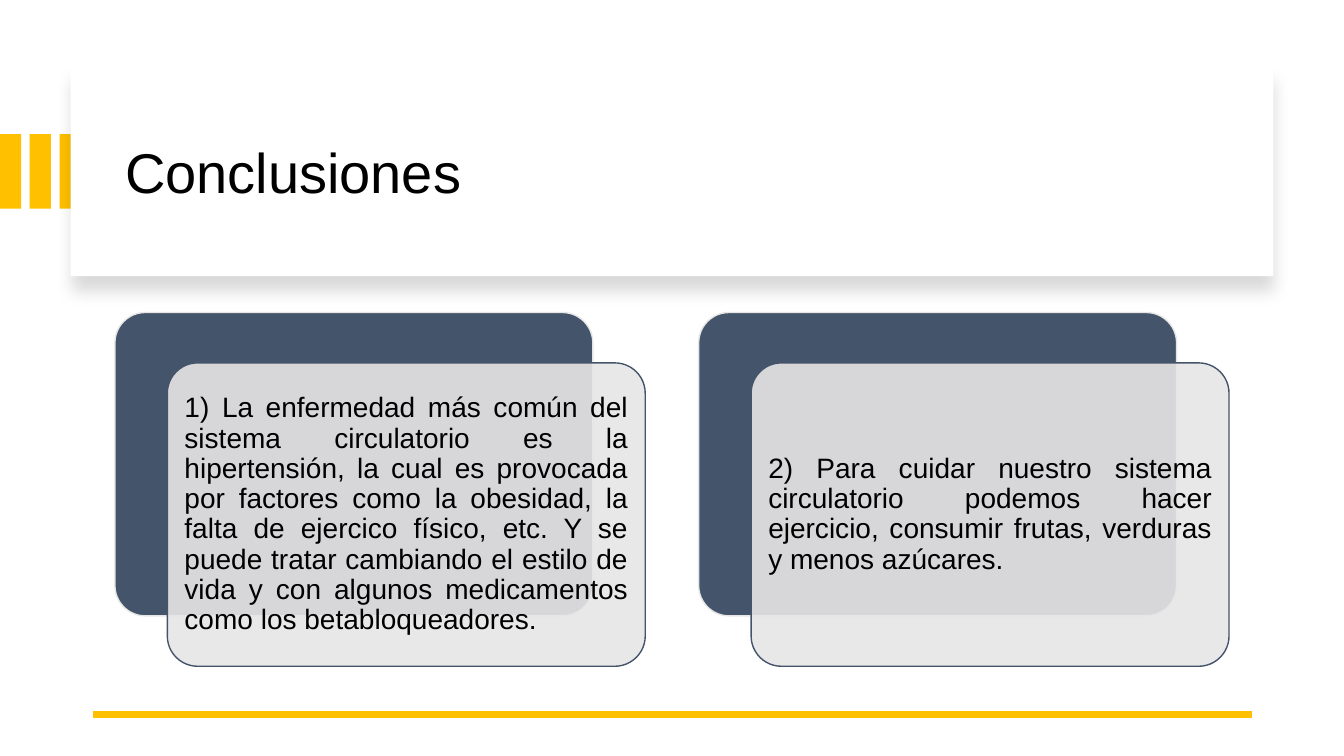
from lxml import etree
from pptx import Presentation
from pptx.dml.color import RGBColor
from pptx.enum.shapes import MSO_CONNECTOR, MSO_SHAPE
from pptx.enum.text import MSO_ANCHOR, MSO_AUTO_SIZE, PP_ALIGN
from pptx.oxml import parse_xml
from pptx.oxml.ns import nsdecls, qn
from pptx.util import Inches, Pt

RECTANGLE, ROUNDED = MSO_SHAPE.RECTANGLE, MSO_SHAPE.ROUNDED_RECTANGLE
STRAIGHT = MSO_CONNECTOR.STRAIGHT
MIDDLE, NO_FIT = MSO_ANCHOR.MIDDLE, MSO_AUTO_SIZE.NONE
LEFT, JUSTIFY = PP_ALIGN.LEFT, PP_ALIGN.JUSTIFY

GOLD, NAVY, GREY, WHITE, BLACK = "FFC000", "44546A", "E7E6E6", "FFFFFF", "000000"
CELL = 0.1  # inches per grid column and row

CONCLUSIONS = [
    "1) La enfermedad más común del sistema circulatorio es la hipertensión, "
    "la cual es provocada por factores como la obesidad, la falta de ejercico "
    "físico, etc. Y se puede tratar cambiando el estilo de vida y con algunos "
    "medicamentos como los betabloqueadores.",
    "2) Para cuidar nuestro sistema circulatorio podemos hacer ejercicio, "
    "consumir frutas, verduras y menos azúcares.",
]


def colour(value):
    return RGBColor.from_string(value)


def cells(*counts):
    return [Inches(count * CELL) for count in counts]


def apply_formats(target, formats):
    for name, value in formats.items():
        setattr(target, name, value)


class SlideBuilder:
    font = "Arial"

    def __init__(self, deck):
        self.page = deck.slides.add_slide(deck.slide_layouts[5])
        self.shapes = self.page.shapes

    def box(self, kind, area, fill, line=None, opacity=None):
        box = self.shapes.add_shape(kind, *cells(*area))
        box.shadow.inherit = False
        box.fill.solid()
        box.fill.fore_color.rgb = colour(fill)
        if kind == ROUNDED:
            box.adjustments[0] = 0.1
        if line:
            box.line.color.rgb = colour(line)
            box.line.width = Pt(1)
        else:
            box.line.fill.background()
        if opacity:
            solid = box._element.spPr.find(qn("a:solidFill"))
            etree.SubElement(solid[0], qn("a:alpha"), val=str(opacity * 1000))
        return box

    def cast_shadow(self, box):
        effects = box._element.spPr.find(qn("a:effectLst"))
        effects.append(parse_xml(
            f'<a:outerShdw {nsdecls("a")} blurRad="{Pt(11)}" dist="{Pt(10)}" '
            f'dir="5400000" algn="t" rotWithShape="0"><a:srgbClr val="{BLACK}">'
            '<a:alpha val="15000"/></a:srgbClr></a:outerShdw>'))

    def fill_text(self, box, text, size, frame_format, para_format):
        frame = box.text_frame
        apply_formats(frame, {"word_wrap": True, "auto_size": NO_FIT,
                              "vertical_anchor": MIDDLE, **frame_format})
        para = frame.paragraphs[0]
        apply_formats(para, {"line_spacing": 0.9, **para_format})
        span = para.add_run()
        span.text = text
        apply_formats(span.font, {"name": self.font, "size": Pt(size)})
        span.font.color.rgb = colour(BLACK)

    def title(self, text, area):
        box = self.shapes.title
        sides = ("left", "top", "width", "height")
        apply_formats(box, dict(zip(sides, cells(*area))))
        self.shapes._spTree.append(box._element)  # bring in front of the card
        self.fill_text(box, text, 40, {}, {"alignment": LEFT})

    def text(self, text, area):
        box = self.shapes.add_textbox(*cells(*area))
        sides = ("left", "top", "right", "bottom")
        margins = {f"margin_{side}": Inches(0.08) for side in sides}
        self.fill_text(box, text, 20, margins,
                       {"alignment": JUSTIFY, "space_after": Pt(7)})

    def rule(self, ends, line, width):
        rule = self.shapes.add_connector(STRAIGHT, *cells(*ends))
        rule.line.color.rgb = colour(line)
        rule.line.width = Pt(width)
        etree.SubElement(rule._element.spPr, qn("a:effectLst"))


def main():
    deck = Presentation()
    deck.slide_width, deck.slide_height = Inches(13.33), Inches(7.5)
    slide = SlideBuilder(deck)

    # Gold stripes at the left edge
    for index in range(3):
        slide.box(RECTANGLE, (index * 2.95, 13.3, 2.1, 7.4), GOLD)

    # Title card
    card = slide.box(RECTANGLE, (7, 6.7, 119.3, 20.7), WHITE)
    slide.cast_shadow(card)
    slide.title("Conclusiones", (11.4, 8.9, 111.3, 17))

    # Bottom rule
    slide.rule((124.2, 70.9, 9.2, 70.9), GOLD, 4.5)

    # Conclusions: a dark panel with a lighter one offset over it
    for index, conclusion in enumerate(CONCLUSIONS):
        left = 11.4 + index * 57.9
        slide.box(ROUNDED, (left, 31, 47.4, 30.1), NAVY, GREY)
        slide.box(ROUNDED, (left + 5.2, 36, 47.4, 30.1), GREY, NAVY, opacity=90)
        slide.text(conclusion, (left + 6.1, 36.9, 45.6, 28.3))

    deck.save("out.pptx")


if __name__ == "__main__":
    main()
